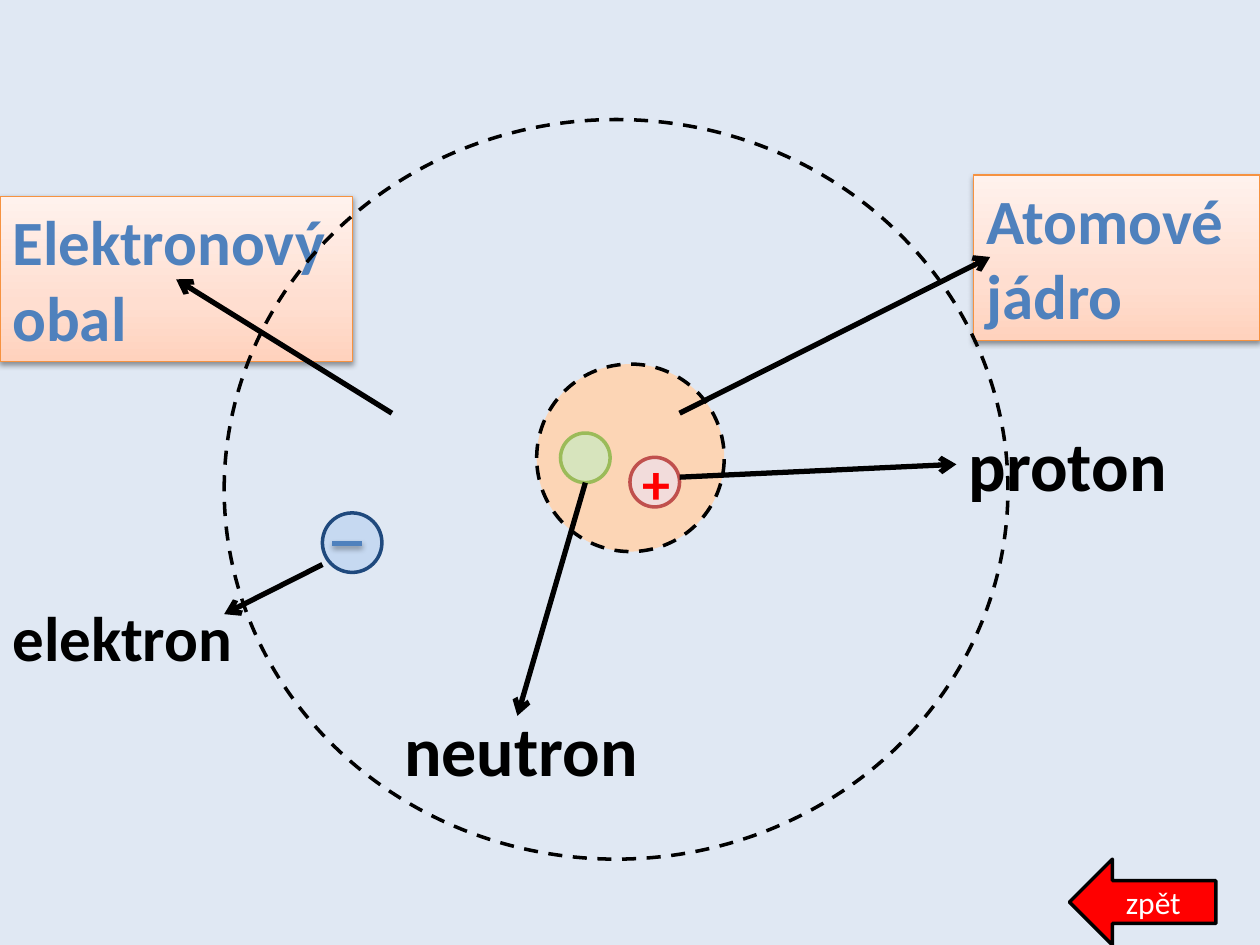
from lxml.etree import SubElement
from copy import deepcopy
from pptx import Presentation
from pptx.dml.color import RGBColor
from pptx.enum.dml import MSO_LINE_DASH_STYLE as Dash
from pptx.enum.shapes import MSO_CONNECTOR as Connector, MSO_SHAPE as Shape
from pptx.enum.text import MSO_ANCHOR as Anchor, MSO_AUTO_SIZE as AutoSize, PP_ALIGN as Align
from pptx.oxml.ns import qn
from pptx.util import Cm, Pt

COLORS = {
    "background": "E0E8F3", "black": "000000", "white": "FFFFFF", "red": "FF0000",
    "nucleus": "FCD5B5", "label_line": "F69240", "blue": "4F81BD",
    "electron": "C6D9F1", "electron_line": "1F497D",
    "proton": "F2DCDB", "proton_line": "C0504D",
    "neutron": "D7E4BD", "neutron_line": "9BBB59",
    "label_bottom": "FFD2BD", "label_middle": "FFDED0", "label_top": "FFF2ED",
}
LABEL_STOPS = [(0, "label_bottom"), (0.35, "label_middle"), (1, "label_top")]


class AtomSlide:
    """Hold the style and the slide, and draw each kind of element."""

    font = "Calibri"

    def __init__(self, presentation):
        self.slide = presentation.slides.add_slide(presentation.slide_layouts[6])
        self.shapes = self.slide.shapes
        fill = self.slide.background.fill
        fill.solid()
        fill.fore_color.rgb = self.color("background")

    def color(self, name):
        return RGBColor.from_string(COLORS[name])

    def outline(self, line, color, width):
        line.color.rgb = self.color(color)
        line.width = Pt(width)

    def shadow(self, shape, alpha, distance):
        effects = shape.element.spPr.find(qn("a:effectLst"))
        outer = SubElement(effects, qn("a:outerShdw"), blurRad="40000", dist=str(distance),
                           dir="5400000", rotWithShape="0")
        color = SubElement(outer, qn("a:srgbClr"), val=COLORS["black"])
        SubElement(color, qn("a:alpha"), val=str(alpha * 1000))

    def add_words(self, shape, text, size, color, bold=True, align=Align.LEFT):
        paragraph = shape.text_frame.paragraphs[0]
        paragraph.alignment = align
        run = paragraph.add_run()
        run.text = text
        run.font.name = self.font
        run.font.size = Pt(size)
        run.font.bold = bold
        run.font.color.rgb = self.color(color)

    def shape(self, kind, box, fill, line, width=2, dash=None, shapes=None):
        shape = (shapes or self.shapes).add_shape(kind, *map(Cm, box))
        shape.shadow.inherit = False
        if fill:
            shape.fill.solid()
            shape.fill.fore_color.rgb = self.color(fill)
        else:
            shape.fill.background()
        self.outline(shape.line, line, width)
        if dash:
            shape.line.dash_style = dash
        return shape

    def particle(self, left, top, size, name, shapes=None):
        return self.shape(Shape.OVAL, (left, top, size, size), name, f"{name}_line", shapes=shapes)

    def label(self, text, box):
        shape = self.shape(Shape.RECTANGLE, box, None, "label_line", 0.75)
        shape.fill.gradient()
        stop_list = shape.element.spPr.find(qn("a:gradFill")).find(qn("a:gsLst"))
        stop_list.append(deepcopy(stop_list[0]))
        for stop, (position, color) in zip(shape.fill.gradient_stops, LABEL_STOPS):
            stop.position = position
            stop.color.rgb = self.color(color)
        shape.fill.gradient_angle = 90
        self.shadow(shape, 38, 20000)
        frame = shape.text_frame
        frame.word_wrap = True
        frame.auto_size = AutoSize.SHAPE_TO_FIT_TEXT
        frame.vertical_anchor = Anchor.TOP
        self.add_words(shape, text, 36, "blue")

    def text(self, text, box, size, color="black", wrap=False, shapes=None):
        shape = (shapes or self.shapes).add_textbox(*map(Cm, box))
        shape.text_frame.word_wrap = wrap
        shape.text_frame.auto_size = AutoSize.SHAPE_TO_FIT_TEXT
        self.add_words(shape, text, size, color)
        return shape

    def line(self, start, end, color="black", shapes=None):
        line = (shapes or self.shapes).add_connector(Connector.STRAIGHT, *map(Cm, start + end))
        self.outline(line.line, color, 3)
        SubElement(line.element.spPr, qn("a:effectLst"))
        return line

    def arrow(self, tip, origin):
        line = self.line(tip, origin)
        SubElement(line.element.spPr.find(qn("a:ln")), qn("a:headEnd"), type="arrow")
        return line


def main():
    presentation = Presentation()
    presentation.slide_width, presentation.slide_height = Cm(25.4), Cm(19.05)
    atom = AtomSlide(presentation)

    atom.shape(Shape.OVAL, (10.82, 7.34, 3.78, 3.78), "nucleus", "black", dash=Dash.DASH)
    atom.label("Elektronový obal", (0, 3.96, 7.11, 3.33))
    atom.label("Atomové jádro", (19.63, 3.53, 5.77, 3.33))
    atom.text("neutron", (7.9, 14.12, 5.28, 1.96), 40)
    proton_text = atom.text("proton", (19.28, 8.38, 4.55, 1.96), 40)
    atom.shape(Shape.OVAL, (4.52, 2.41, 15.8, 14.91), None, "black", dash=Dash.DASH)

    electron = atom.shapes.add_group_shape().shapes
    atom.particle(6.5, 10.34, 1.2, "electron", electron)
    minus = atom.line((6.7, 10.95), (7.3, 10.95), "blue", electron)
    atom.shadow(minus, 35, 23000)

    proton = atom.shapes.add_group_shape().shapes
    atom.particle(12.7, 9.22, 1, "proton", proton)
    atom.text("+", (12.7, 8.92, 1, 1.63), 32, "red", True, proton)
    atom.particle(11.3, 8.73, 1, "neutron")

    for tip, origin in [
        ((19.96, 5.18), (13.7, 8.33)),
        ((3.55, 5.63), (7.9, 8.33)),
        ((10.43, 14.43), (11.8, 9.73)),
        ((4.52, 12.38), (6.5, 11.38)),
    ]:
        atom.arrow(tip, origin)
    atom.arrow((19.28, 9.36), (13.7, 9.62)).begin_connect(proton_text, 1)

    atom.text("elektron", (0, 11.94, 5, 1.8), 36)
    back = atom.shape(Shape.LEFT_ARROW, (21.56, 17.32, 2.95, 1.73), "red", "black")
    back.text_frame.vertical_anchor = Anchor.MIDDLE
    atom.add_words(back, "zpět", 18, "white", False, Align.CENTER)
    presentation.save("out.pptx")


if __name__ == "__main__":
    main()
